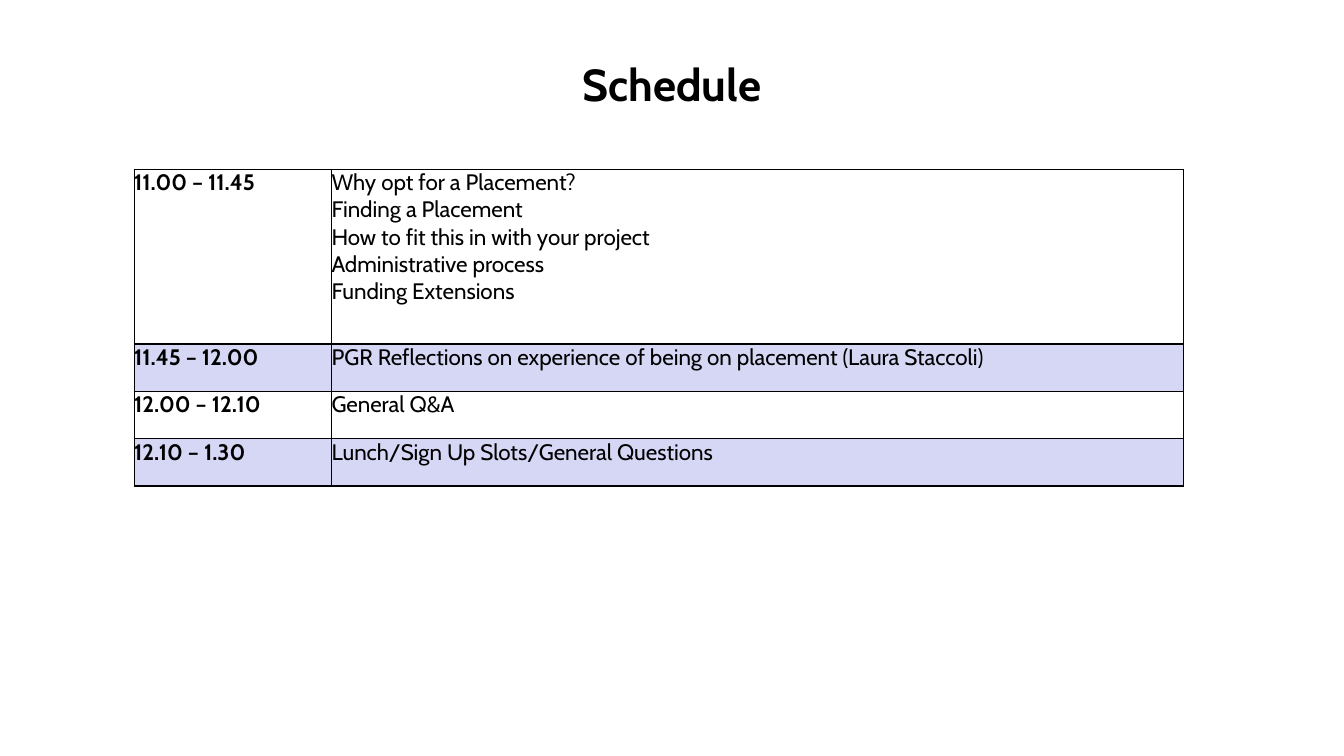
from dataclasses import dataclass

import pptx
import pptx.dml.color
import pptx.enum.text
import pptx.oxml
import pptx.oxml.ns
import pptx.presentation
import pptx.slide
import pptx.table
import pptx.text.text
import pptx.util

Pt = pptx.util.Pt
RGBColor = pptx.dml.color.RGBColor

BLACK = RGBColor(0x00, 0x00, 0x00)
LAVENDER = RGBColor(0xD6, 0xD6, 0xF5)
FONT = "Cabin"
COLUMN_WIDTHS = (141, 608.4)


@dataclass(frozen=True)
class Session:
    time: str
    topics: tuple[str, ...]
    height: float = 33.84
    shaded: bool = False


SESSIONS = (
    Session("11.00 – 11.45", (
        "Why opt for a Placement?",
        "Finding a Placement",
        "How to fit this in with your project",
        "Administrative process",
        "Funding Extensions",
    ), height=124.7),
    Session("11.45 – 12.00",
            ("PGR Reflections on experience of being on placement (Laura Staccoli)",),
            shaded=True),
    Session("12.00 – 12.10", ("General Q&A",)),
    Session("12.10 – 1.30", ("Lunch/Sign Up Slots/General Questions",), shaded=True),
)


def set_font(p: pptx.text.text._Paragraph, size: float, bold: bool) -> None:
    p.font.name = FONT
    p.font.size = Pt(size)
    p.font.bold = bold
    p.font.color.rgb = BLACK


def add_borders(cell: pptx.table._Cell) -> None:
    """Draw a 1 pt black line on all four sides; lines must precede the fill."""
    tc_pr = cell._tc.get_or_add_tcPr()
    for i, side in enumerate(("lnL", "lnR", "lnT", "lnB")):
        tc_pr.insert(i, pptx.oxml.parse_xml(
            f'<a:{side} {pptx.oxml.ns.nsdecls("a")} w="{Pt(1)}">'
            f'<a:solidFill><a:srgbClr val="{BLACK}"/></a:solidFill></a:{side}>'))


def fill_cell(cell: pptx.table._Cell, lines: tuple[str, ...], bold: bool, shaded: bool) -> None:
    cell.margin_left = cell.margin_right = cell.margin_top = cell.margin_bottom = Pt(0)
    if shaded:
        cell.fill.solid()
        cell.fill.fore_color.rgb = LAVENDER
    else:
        cell.fill.background()
    add_borders(cell)
    tf = cell.text_frame
    tf.text = "\n".join(lines)
    for p in tf.paragraphs:
        set_font(p, 16, bold)


def add_title(s: pptx.slide.Slide, text: str) -> None:
    sp = s.shapes.title
    sp.left, sp.top, sp.width, sp.height = Pt(72), Pt(18), Pt(816), Pt(84)
    tf = sp.text_frame
    tf.text = text
    tf.vertical_anchor = pptx.enum.text.MSO_ANCHOR.MIDDLE
    p = tf.paragraphs[0]
    p.alignment = pptx.enum.text.PP_ALIGN.CENTER
    set_font(p, 32, True)


def add_schedule(s: pptx.slide.Slide, sessions: tuple[Session, ...]) -> None:
    height = sum(session.height for session in sessions)
    table = s.shapes.add_table(len(sessions), len(COLUMN_WIDTHS), Pt(95.8), Pt(121),
                               Pt(sum(COLUMN_WIDTHS)), Pt(height)).table
    table.first_row = table.horz_banding = False
    for column, width in zip(table.columns, COLUMN_WIDTHS):
        column.width = Pt(width)
    for i, session in enumerate(sessions):
        table.rows[i].height = Pt(session.height)
        fill_cell(table.cell(i, 0), (session.time,), True, session.shaded)
        fill_cell(table.cell(i, 1), session.topics, False, session.shaded)


def main() -> None:
    prs = pptx.Presentation()
    prs.slide_width, prs.slide_height = Pt(960), Pt(540)
    s = prs.slides.add_slide(prs.slide_layouts[5])
    add_title(s, "Schedule")
    add_schedule(s, SESSIONS)
    prs.save("out.pptx")


if __name__ == "__main__":
    main()
